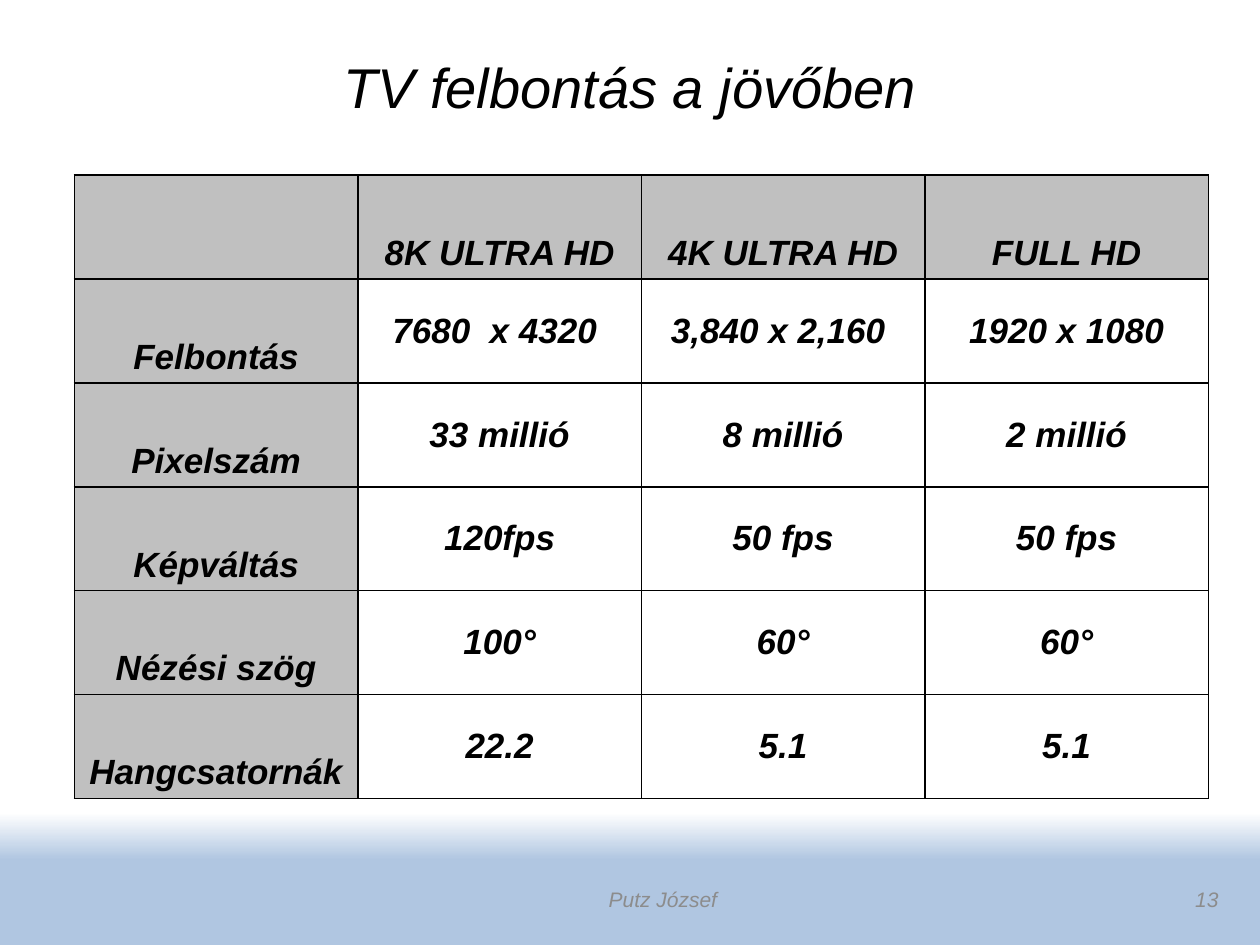
from lxml import etree
from pptx import Presentation
from pptx.dml.color import RGBColor
from pptx.enum import text as t
from pptx.oxml.ns import qn
from pptx.util import Pt

TITLE = "TV felbontás a jövőben"
ROWS = [
    ["", "8K ULTRA HD", "4K ULTRA HD", "FULL HD"],
    ["Felbontás", "7680  x 4320 ", "3,840 x 2,160 ", "1920 x 1080"],
    ["Pixelszám", "33 millió", "8 millió", "2 millió"],
    ["Képváltás", "120fps", "50 fps", "50 fps"],
    ["Nézési szög", "100°", "60°", "60°"],
    ["Hangcsatornák ", "22.2", "5.1", "5.1"],
]
AUTHOR, PAGE = "Putz József", "13"
STOPS = [(86, "FFFFFF"), (91, "B0C6E1"), (100, "B0C6E1")]
BLACK, WHITE, GRAY, MUTED = "000000", "FFFFFF", "C0C0C0", "8C8C8C"
COL_W, ROW_H = 162, 59.4
CENTER, RIGHT = t.PP_ALIGN.CENTER, t.PP_ALIGN.RIGHT
MIDDLE, BOTTOM = t.MSO_ANCHOR.MIDDLE, t.MSO_ANCHOR.BOTTOM


def color(code):
    return RGBColor.from_string(code)


def write(frame, words, size=20, ink=BLACK, bold=False, align=CENTER):
    par = frame.paragraphs[0]
    par.alignment = align
    run = par.add_run()
    run.text = words
    font = run.font
    font.name, font.size, font.bold, font.italic = "Arial", Pt(size), bold, True
    font.color.rgb = color(ink)


def label(slide, words, left, top, width, height, **style):
    frame = slide.shapes.add_textbox(Pt(left), Pt(top), Pt(width), Pt(height)).text_frame
    frame.word_wrap = True
    frame.vertical_anchor = MIDDLE
    write(frame, words, **style)


def add_solid(parent, code):
    fill = etree.SubElement(parent, qn("a:solidFill"))
    etree.SubElement(fill, qn("a:srgbClr"), val=code)


def border(cell):
    props = cell._tc.get_or_add_tcPr()
    for side in "LRTB":
        line = etree.SubElement(props, qn("a:ln" + side), w=str(Pt(1)))
        add_solid(line, BLACK)


def shade(slide):
    """Give the slide a downward gradient background."""
    fill = slide.background.fill
    fill.gradient()
    fill.gradient_angle = 270
    stops = next(slide._element.iter(qn("a:gsLst")))
    for old in list(stops):
        stops.remove(old)
    for pos, code in STOPS:
        stop = etree.SubElement(stops, qn("a:gs"), pos=str(pos * 1000))
        etree.SubElement(stop, qn("a:srgbClr"), val=code)


def add_grid(slide, left, top):
    count, wide = len(ROWS), len(ROWS[0])
    table = slide.shapes.add_table(count, wide, Pt(left), Pt(top),
                                   Pt(wide * COL_W), Pt(count * ROW_H)).table
    for col in table.columns:
        col.width = Pt(COL_W)
    for r, row in enumerate(ROWS):
        table.rows[r].height = Pt(ROW_H)
        for c, words in enumerate(row):
            cell = table.cell(r, c)
            head = r == 0 or c == 0
            border(cell)
            cell.fill.solid()
            cell.fill.fore_color.rgb = color(GRAY if head else WHITE)
            cell.vertical_anchor = BOTTOM if head else MIDDLE
            if words:
                write(cell.text_frame, words, bold=True)


def main():
    deck = Presentation()
    deck.slide_width, deck.slide_height = Pt(720), Pt(540)
    slide = deck.slides.add_slide(deck.slide_layouts[6])
    shade(slide)
    label(slide, TITLE, 36, 21.6, 648, 55.4, size=32)
    add_grid(slide, 42.5, 100)
    small = dict(size=12, ink=MUTED, align=RIGHT)
    label(slide, AUTHOR, 286.6, 505.4, 130.3, 17.3, **small)
    label(slide, PAGE, 663.8, 502.6, 39.6, 22.3, **small)
    deck.save("out.pptx")


if __name__ == "__main__":
    main()
